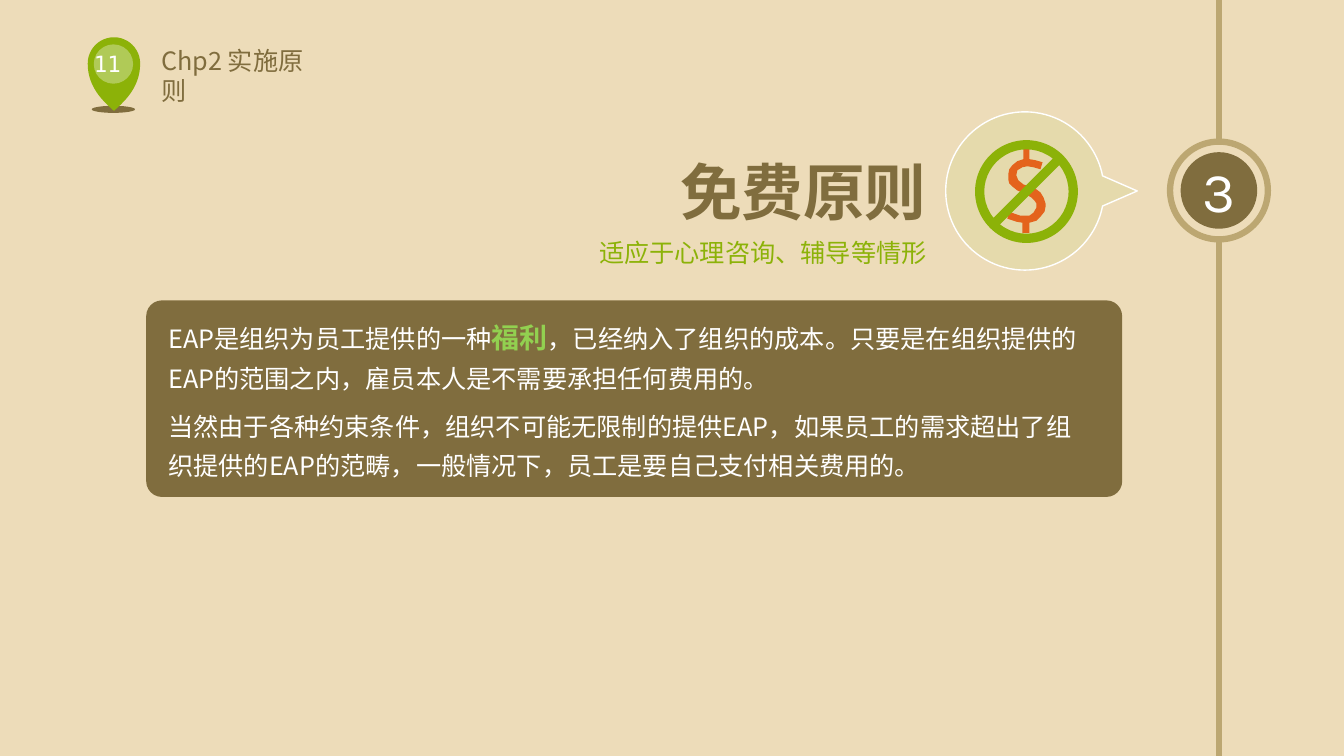
import math

import pptx
import pptx.dml.color
import pptx.enum.shapes
import pptx.enum.text
import pptx.oxml
import pptx.oxml.ns
import pptx.util
from pptx.util import Inches

SHAPE = pptx.enum.shapes.MSO_SHAPE
ALIGN = pptx.enum.text.PP_ALIGN
CJK = "Noto Sans CJK SC"
SAND, BROWN, TAN = "EDDCB9", "806D3E", "BCA772"
GREEN, ORANGE, WHITE = "8CB208", "E4631C", "FFFFFF"
DOLLAR = [
    (15, 83), (15, 73), (9, 72), (3, 70), (0, 69), (2, 62), (7, 64), (13, 66),
    (17, 66), (22, 66), (26, 63), (29, 58), (29, 54), (27, 51), (24, 48),
    (17, 44), (10, 41), (5, 37), (2, 34), (1, 30), (1, 25), (2, 20), (5, 16),
    (10, 12), (16, 10), (16, 0), (22, 0), (22, 10), (28, 11), (35, 13),
    (33, 20), (26, 18), (20, 17), (15, 18), (10, 21), (9, 26), (11, 31),
    (16, 35), (22, 37), (29, 40), (33, 43), (36, 48), (38, 54), (38, 57),
    (37, 62), (33, 67), (29, 71), (22, 73), (22, 83),
]


def rgb(color):
    """Return the colour for a hex string."""
    return pptx.dml.color.RGBColor.from_string(color)


def paint(sp, fill, line=None, width=1, alpha=None):
    """Set fill, outline and opacity of a shape and drop its shadow."""
    sp.shadow.inherit = False
    sp.fill.solid()
    sp.fill.fore_color.rgb = rgb(fill)
    if alpha is not None:
        clr = sp._element.spPr.find(".//" + pptx.oxml.ns.qn("a:srgbClr"))
        node = pptx.oxml.parse_xml(f'<a:alpha {pptx.oxml.ns.nsdecls("a")} val="{alpha * 1000}"/>')
        clr.append(node)
    if line:
        sp.line.color.rgb = rgb(line)
        sp.line.width = pptx.util.Pt(width)
    else:
        sp.line.fill.background()


def add_shape(s, kind, x, y, w, h, fill, **style):
    """Add a painted preset shape."""
    sp = s.shapes.add_shape(kind, Inches(x), Inches(y), Inches(w), Inches(h))
    paint(sp, fill, **style)
    return sp


def add_outline(s, points, fill):
    """Add a closed painted outline through points in inches."""
    emu = [(Inches(x), Inches(y)) for x, y in points]
    builder = s.shapes.build_freeform(*emu[0], scale=1.0)
    builder.add_line_segments(emu[1:], close=True)
    paint(builder.convert_to_shape(), fill)


def style_run(r, size, color, font=CJK, bold=False):
    """Format a run for Latin and East Asian text."""
    r.font.size = pptx.util.Pt(size)
    r.font.bold = bold
    r.font.color.rgb = rgb(color)
    r.font.name = font
    ea = pptx.oxml.parse_xml(f'<a:ea {pptx.oxml.ns.nsdecls("a")} typeface="{font}"/>')
    r.font._element.find(pptx.oxml.ns.qn("a:latin")).addnext(ea)


def add_text(s, x, y, w, h, text, size, color, align=ALIGN.LEFT, font=CJK, bold=False):
    """Add a wrapped text box holding one paragraph."""
    tf = s.shapes.add_textbox(Inches(x), Inches(y), Inches(w), Inches(h)).text_frame
    tf.word_wrap = True
    p = tf.paragraphs[0]
    p.text = text
    p.alignment = align
    p.line_spacing = pptx.util.Pt(size * 1.2)
    style_run(p.runs[0], size, color, font, bold)


def pin_points(x, y, w, h):
    """Return the points of a map pin: a half circle above a curved tip."""
    rad, steps = w / 2, 24
    arc = [(x + rad - rad * math.cos(math.pi * i / steps),
            y + rad - rad * math.sin(math.pi * i / steps)) for i in range(steps + 1)]
    controls = [(rad, rad), (rad, 0.5), (0.1, 0.64), (0, h)]
    side = []
    for i in range(1, steps + 1):
        t = i / steps
        weights = [(1 - t) ** 3, 3 * t * (1 - t) ** 2, 3 * t * t * (1 - t), t ** 3]
        side.append(tuple(sum(k * c[axis] for k, c in zip(weights, controls)) for axis in (0, 1)))
    right = [(x + rad + dx, y + dy) for dx, dy in side]
    left = [(x + rad - dx, y + dy) for dx, dy in reversed(side[:-1])]
    return arc + right + left


def add_header(s, x, y):
    """Place the page pin and the chapter name."""
    add_shape(s, SHAPE.OVAL, x + 0.04, y + 0.68, 0.43, 0.07, BROWN)
    add_outline(s, pin_points(x, y, 0.52, 0.73), GREEN)
    add_shape(s, SHAPE.OVAL, x + 0.06, y + 0.07, 0.39, 0.39, WHITE, alpha=32)
    add_text(s, x - 0.16, y + 0.08, 0.71, 0.37, "11", 16, WHITE, ALIGN.CENTER, "DejaVu Sans Mono")
    add_text(s, x + 0.63, y + 0.03, 1.85, 0.4, "Chp2 实施原则", 18, BROWN)


def add_timeline(s, x, y, height):
    """Place the vertical line and its numbered stop centred at x, y."""
    line = s.shapes.add_connector(
        pptx.enum.shapes.MSO_CONNECTOR.STRAIGHT, Inches(x), 0, Inches(x), Inches(height))
    line.line.color.rgb = rgb(TAN)
    line.line.width = pptx.util.Pt(4.5)
    line._element.spPr.append(pptx.oxml.parse_xml(f'<a:effectLst {pptx.oxml.ns.nsdecls("a")}/>'))
    for size, fill, outline in ((0.97, SAND, TAN), (0.76, BROWN, None)):
        sp = add_shape(s, SHAPE.OVAL, x - size / 2, y - size / 2, size, size, fill,
                       line=outline, width=4.5)
    tf = sp.text_frame
    tf.margin_left = tf.margin_right = tf.margin_top = tf.margin_bottom = 0
    tf.vertical_anchor = pptx.enum.text.MSO_ANCHOR.MIDDLE
    p = tf.paragraphs[0]
    p.text = "3"
    p.alignment = ALIGN.CENTER
    style_run(p.runs[0], 40, WHITE, "Karla")


def add_free_badge(s, x, y, size):
    """Place the callout with the crossed-out dollar sign."""
    sp = add_shape(s, SHAPE.OVAL_CALLOUT, x, y, size, size, "9FCC3E", line=WHITE, alpha=10)
    sp.adjustments[0], sp.adjustments[1] = 0.71, 0
    left, top = x + 0.61, y + 0.37
    add_outline(s, [(left + dx / 100, top + dy / 100) for dx, dy in DOLLAR], ORANGE)
    ban = add_shape(s, SHAPE.NO_SYMBOL, x + 0.29, y + 0.28, 1.02, 1.02, GREEN)
    ban.adjustments[0] = 0.09
    ban.rotation = 90


def add_titles(s, right, y):
    """Place the title and subtitle aligned to a right edge."""
    add_text(s, right - 3.28, y, 3.28, 0.84, "免费原则", 44, BROWN, ALIGN.RIGHT, bold=True)
    add_text(s, right - 3.58, y + 0.83, 3.58, 0.4, "适应于心理咨询、辅导等情形", 18, GREEN, ALIGN.RIGHT)


def add_body(s, x, y, w, h):
    """Place the rounded panel and its two paragraphs."""
    panel = add_shape(s, SHAPE.ROUNDED_RECTANGLE, x, y, w, h, BROWN)
    panel.adjustments[0] = 0.08
    paragraphs = [
        [("EAP是组织为员工提供的一种", 18, WHITE, False),
         ("福利", 20, "92D050", True),
         ("，已经纳入了组织的成本。只要是在组织提供的EAP的范围之内，雇员本人是不需要承担任何费用的。",
          18, WHITE, False)],
        [("当然由于各种约束条件，组织不可能无限制的提供EAP，如果员工的需求超出了组织提供的EAP的范畴，"
          "一般情况下，员工是要自己支付相关费用的。", 18, WHITE, False)],
    ]
    box = s.shapes.add_textbox(Inches(x + 0.12), Inches(y + 0.09), Inches(9.39), Inches(1.8))
    tf = box.text_frame
    tf.word_wrap = True
    for i, parts in enumerate(paragraphs):
        p = tf.add_paragraph() if i else tf.paragraphs[0]
        p.line_spacing = pptx.util.Pt(28.2)
        p.space_before = pptx.util.Pt(6 if i else 0)
        for text, size, color, bold in parts:
            r = p.add_run()
            r.text = text
            style_run(r, size, color, bold=bold)


def main():
    """Build the slide and save it."""
    prs = pptx.Presentation()
    prs.slide_width, prs.slide_height = Inches(13.33), Inches(7.5)
    s = prs.slides.add_slide(prs.slide_layouts[6])
    s.background.fill.solid()
    s.background.fill.fore_color.rgb = rgb(SAND)
    add_header(s, 0.87, 0.37)
    add_body(s, 1.45, 2.98, 9.68, 1.95)
    add_timeline(s, 12.09, 1.89, 7.5)
    add_titles(s, 9.29, 1.48)
    add_free_badge(s, 9.38, 1.11, 1.57)
    prs.save("out.pptx")


if __name__ == "__main__":
    main()
